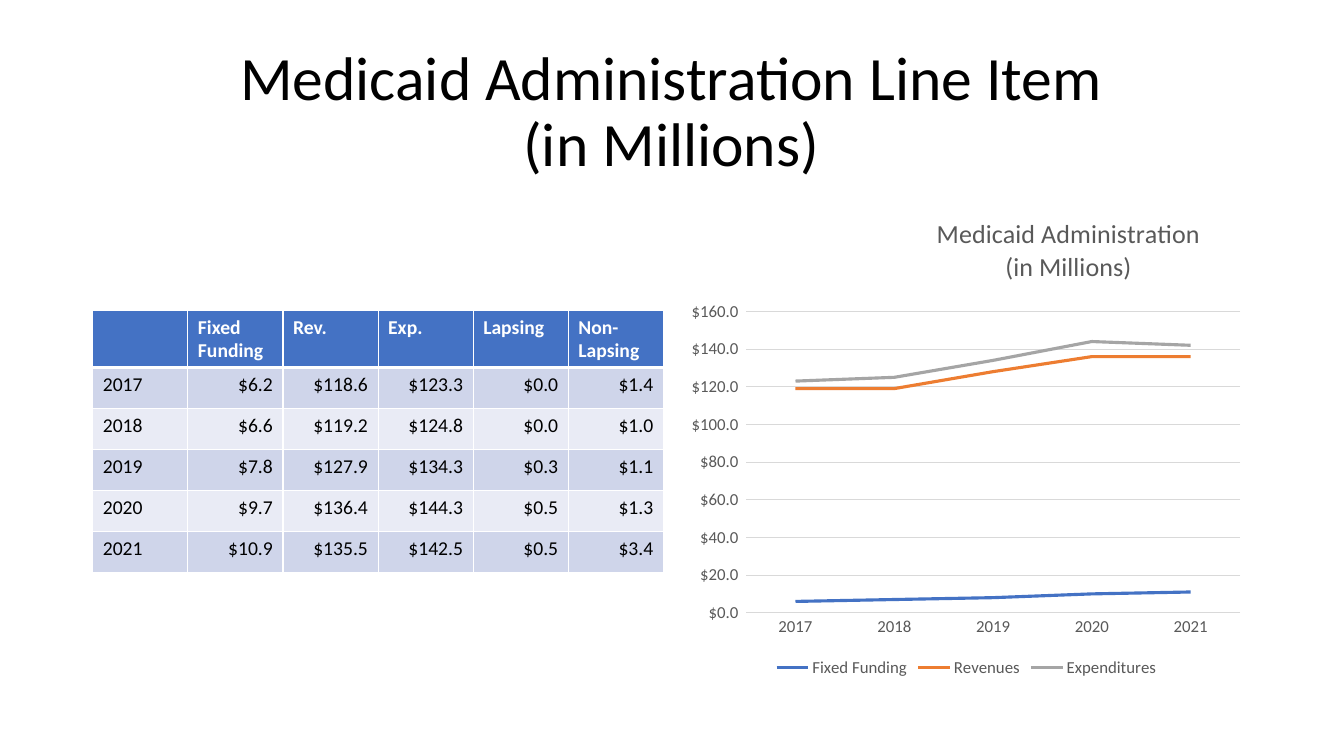
"""Build the Medicaid administration slide with its table and line chart."""
from pptx import Presentation
from pptx.chart.data import CategoryChartData
from pptx.dml.color import RGBColor
from pptx.enum.chart import XL_CHART_TYPE, XL_LEGEND_POSITION, XL_MARKER_STYLE, XL_TICK_MARK
from pptx.enum.text import MSO_ANCHOR, PP_ALIGN
from pptx.oxml import parse_xml
from pptx.oxml.ns import nsdecls, qn
from pptx.util import Inches, Pt

LINE = XL_CHART_TYPE.LINE
BOTTOM = XL_LEGEND_POSITION.BOTTOM
NO_MARKER = XL_MARKER_STYLE.NONE
NO_TICK = XL_TICK_MARK.NONE
MIDDLE = MSO_ANCHOR.MIDDLE
LEFT, CENTER, RIGHT = PP_ALIGN.LEFT, PP_ALIGN.CENTER, PP_ALIGN.RIGHT

BLACK = RGBColor(0x00, 0x00, 0x00)
WHITE = RGBColor(0xFF, 0xFF, 0xFF)
BLUE = RGBColor(0x44, 0x72, 0xC4)
ORANGE = RGBColor(0xED, 0x7D, 0x31)
GRAY = RGBColor(0xA5, 0xA5, 0xA5)
BAND_DARK = RGBColor(0xCF, 0xD5, 0xEA)
BAND_LIGHT = RGBColor(0xE9, 0xEB, 0xF5)
CHART_TEXT = RGBColor(0x59, 0x59, 0x59)
GRID = RGBColor(0xD9, 0xD9, 0xD9)

CHART_W, CHART_H = 5.67, 4.76
HEADERS = ["", "Fixed Funding", "Rev.", "Exp.", "Lapsing", "Non-Lapsing"]
YEARS = [
    ("2017", 6.2, 118.6, 123.3, 0.0, 1.4),
    ("2018", 6.6, 119.2, 124.8, 0.0, 1.0),
    ("2019", 7.8, 127.9, 134.3, 0.3, 1.1),
    ("2020", 9.7, 136.4, 144.3, 0.5, 1.3),
    ("2021", 10.9, 135.5, 142.5, 0.5, 3.4),
]
SERIES = [("Fixed Funding", BLUE), ("Revenues", ORANGE), ("Expenditures", GRAY)]


def style_font(font, size, color, bold=False):
    font.name = "Calibri"
    font.size = Pt(size)
    font.color.rgb = color
    font.bold = bold


def set_layout(parent, index, **parts):
    for old in parent.findall(qn("c:layout")):
        parent.remove(old)
    tags = "".join(f'<c:{tag} val="{val}"/>' for tag, val in parts.items())
    parent.insert(index, parse_xml(
        f'<c:layout {nsdecls("c")}><c:manualLayout>{tags}</c:manualLayout></c:layout>'))


prs = Presentation()
prs.slide_width = Inches(13.33)
prs.slide_height = Inches(7.5)
s = prs.slides.add_slide(prs.slide_layouts[6])

sp = s.shapes.add_textbox(Inches(0.91), Inches(0.4), Inches(11.5), Inches(1.45))
tf = sp.text_frame
tf.word_wrap = True
tf.vertical_anchor = MIDDLE
p = tf.paragraphs[0]
p.alignment = CENTER
p.line_spacing = 0.9
for i, text in enumerate(["Medicaid Administration Line Item", "(in Millions)"]):
    if i:
        p.add_line_break()
    r = p.add_run()
    r.text = text
    style_font(r.font, 44, BLACK)

rows = [HEADERS] + [[year] + [f"${v:.1f}" for v in vals] for year, *vals in YEARS]
table = s.shapes.add_table(len(rows), len(HEADERS), Inches(0.92), Inches(3.08),
                           Inches(5.66), Inches(2.44)).table
for i, row in enumerate(rows):
    for j, text in enumerate(row):
        cell = table.cell(i, j)
        cell.fill.solid()
        cell.fill.fore_color.rgb = BLUE if i == 0 else BAND_DARK if i % 2 else BAND_LIGHT
        if i == 0:
            cell.fill._xPr.insert(0, parse_xml(
                f'<a:lnB {nsdecls("a")} w="{Pt(3)}"><a:solidFill>'
                f'<a:srgbClr val="{WHITE}"/></a:solidFill></a:lnB>'))
        p = cell.text_frame.paragraphs[0]
        p.alignment = RIGHT if i and j else LEFT
        if text:
            r = p.add_run()
            r.text = text
            style_font(r.font, 14, BLACK if i else WHITE, bold=i == 0)

data = CategoryChartData()
data.categories = [row[0] for row in YEARS]
for k, (name, color) in enumerate(SERIES, start=1):
    data.add_series(name, [round(row[k]) for row in YEARS])
chart = s.shapes.add_chart(LINE, Inches(6.75), Inches(2), Inches(CHART_W), Inches(CHART_H),
                           data).chart
style_font(chart.font, 12, CHART_TEXT)

chart.has_title = True
tf = chart.chart_title.text_frame
for i, text in enumerate(["Medicaid Administration", "(in Millions)"]):
    p = tf.add_paragraph() if i else tf.paragraphs[0]
    p.alignment = CENTER
    r = p.add_run()
    r.text = text
    style_font(r.font, 18.6, CHART_TEXT)
title = chart._chartSpace.xpath("c:chart/c:title")[0]
set_layout(title, 1, xMode="edge", yMode="edge", x=2.51 / CHART_W, y=0.12 / CHART_H)
plot_area = chart._chartSpace.xpath("c:chart/c:plotArea")[0]
set_layout(plot_area, 0, layoutTarget="inner", xMode="edge", yMode="edge",
           x=0.65 / CHART_W, y=1.09 / CHART_H, w=4.9 / CHART_W, h=2.99 / CHART_H)

chart.has_legend = True
chart.legend.position = BOTTOM
chart.legend.include_in_layout = False
style_font(chart.legend.font, 12, CHART_TEXT)

for axis in (chart.category_axis, chart.value_axis):
    axis.major_tick_mark = NO_TICK
    axis.minor_tick_mark = NO_TICK
    style_font(axis.tick_labels.font, 12, CHART_TEXT)
value_axis = chart.value_axis
value_axis.minimum_scale = 0
value_axis.maximum_scale = 160
value_axis.major_unit = 20
value_axis.tick_labels.number_format = '"$"#,##0.0_);[Red]\\("$"#,##0.0\\)'
value_axis.tick_labels.number_format_is_linked = False
value_axis.format.line.fill.background()
for line in (chart.category_axis.format.line, value_axis.major_gridlines.format.line):
    line.color.rgb = GRID
    line.width = Pt(0.75)

for series, (name, color) in zip(chart.plots[0].series, SERIES):
    series.smooth = False
    series.marker.style = NO_MARKER
    series.format.line.color.rgb = color
    series.format.line.width = Pt(2.25)

prs.save("out.pptx")
